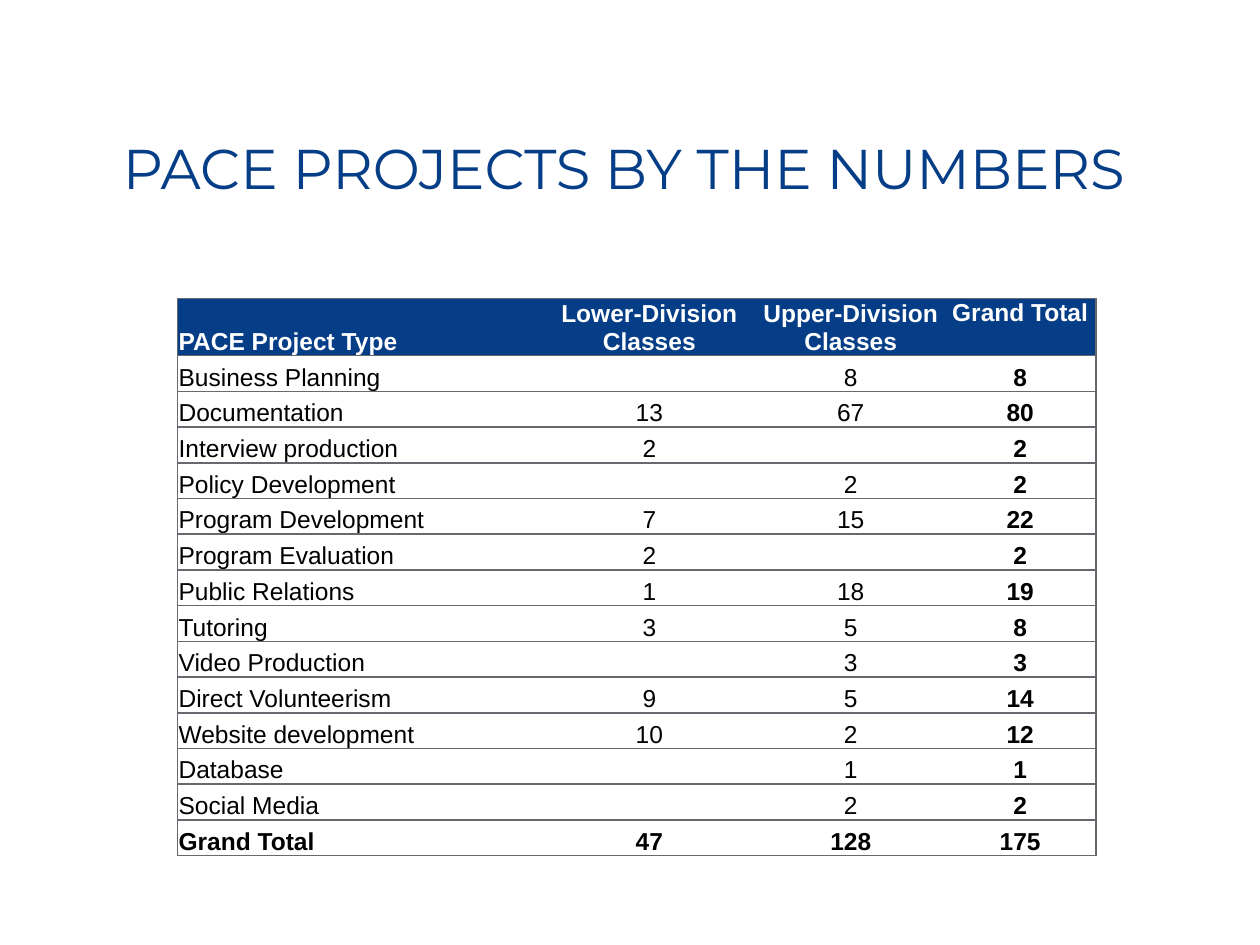
from lxml.etree import SubElement
from pptx import Presentation
from pptx.dml.color import RGBColor
from pptx.enum.text import MSO_ANCHOR, MSO_AUTO_SIZE, PP_ALIGN
from pptx.oxml.ns import qn
from pptx.util import Cm, Pt

COLORS = {
    "title": "053E87",
    "header": "053D87",
    "rule": "66696E",
    "body": "FFFFFF",
    "header_text": "FFFFFF",
    "body_text": "000000",
}
COLUMN_WIDTHS = [7.34, 4.34, 3.78, 3.05]
HEADER_HEIGHT, ROW_HEIGHT = 1.15, 0.72
TEXT_SIZE = Pt(14)

PROJECTS = [
    ("PACE Project Type", "Lower-Division Classes", "Upper-Division Classes", "Grand Total"),
    ("Business Planning", "", "8", "8"),
    ("Documentation", "13", "67", "80"),
    ("Interview production", "2", "", "2"),
    ("Policy Development", "", "2", "2"),
    ("Program Development", "7", "15", "22"),
    ("Program Evaluation", "2", "", "2"),
    ("Public Relations", "1", "18", "19"),
    ("Tutoring", "3", "5", "8"),
    ("Video Production", "", "3", "3"),
    ("Direct Volunteerism", "9", "5", "14"),
    ("Website development", "10", "2", "12"),
    ("Database", "", "1", "1"),
    ("Social Media", "", "2", "2"),
    ("Grand Total", "47", "128", "175"),
]


def set_borders(cell, ruled_sides):
    """Rule the given sides of a cell and clear the others; call before filling it."""
    properties = cell._tc.get_or_add_tcPr()
    for side in "LRTB":
        border = SubElement(properties, qn(f"a:ln{side}"), w=str(Pt(1)))
        if side in ruled_sides:
            fill = SubElement(border, qn("a:solidFill"))
            SubElement(fill, qn("a:srgbClr"), val=COLORS["rule"])
        else:
            SubElement(border, qn("a:noFill"))


presentation = Presentation()
presentation.slide_width, presentation.slide_height = Cm(25.4), Cm(19.05)
slide = presentation.slides.add_slide(presentation.slide_layouts[5])

# Title
title = slide.shapes.title
title.left, title.top, title.width, title.height = Cm(1.52), Cm(2.72), Cm(22.12), Cm(3.02)
title.text_frame.auto_size = MSO_AUTO_SIZE.NONE
title.text_frame.vertical_anchor = MSO_ANCHOR.TOP
heading = title.text_frame.paragraphs[0]
heading.alignment = PP_ALIGN.CENTER
heading.line_spacing = 0.9
heading_run = heading.add_run()
heading_run.text = "PACE PROJECTS BY THE NUMBERS"
heading_run.font.name = "Montserrat"
heading_run.font.size = Pt(32)
heading_run.font.color.rgb = RGBColor.from_string(COLORS["title"])

# Project table
last_row, last_column = len(PROJECTS) - 1, len(COLUMN_WIDTHS) - 1
table = slide.shapes.add_table(
    len(PROJECTS), len(COLUMN_WIDTHS), Cm(3.58), Cm(6.02),
    Cm(sum(COLUMN_WIDTHS)), Cm(HEADER_HEIGHT + last_row * ROW_HEIGHT),
).table
table.horz_banding = False
for column, width in zip(table.columns, COLUMN_WIDTHS):
    column.width = Cm(width)

for r, project in enumerate(PROJECTS):
    is_header = r == 0
    table.rows[r].height = Cm(HEADER_HEIGHT if is_header else ROW_HEIGHT)
    for c, entry in enumerate(project):
        cell = table.cell(r, c)
        set_borders(cell, "TB" + ("L" if c == 0 else "R" if c == last_column else ""))
        cell.fill.solid()
        cell.fill.fore_color.rgb = RGBColor.from_string(COLORS["header" if is_header else "body"])
        cell.margin_left = cell.margin_right = cell.margin_top = Cm(0.02)
        cell.margin_bottom = 0
        top_aligned = is_header and c == last_column
        cell.vertical_anchor = MSO_ANCHOR.TOP if top_aligned else MSO_ANCHOR.BOTTOM

        paragraph = cell.text_frame.paragraphs[0]
        paragraph.alignment = PP_ALIGN.LEFT if c == 0 else PP_ALIGN.CENTER
        if not entry:
            # Keeps a blank cell from stretching its row
            SubElement(paragraph._p, qn("a:endParaRPr"), sz=str(int(TEXT_SIZE.pt * 100)))
            continue
        run = paragraph.add_run()
        run.text = entry
        run.font.name = "Arial"
        run.font.size = TEXT_SIZE
        run.font.bold = r in (0, last_row) or c == last_column
        run.font.color.rgb = RGBColor.from_string(
            COLORS["header_text" if is_header else "body_text"])

presentation.save("out.pptx")
